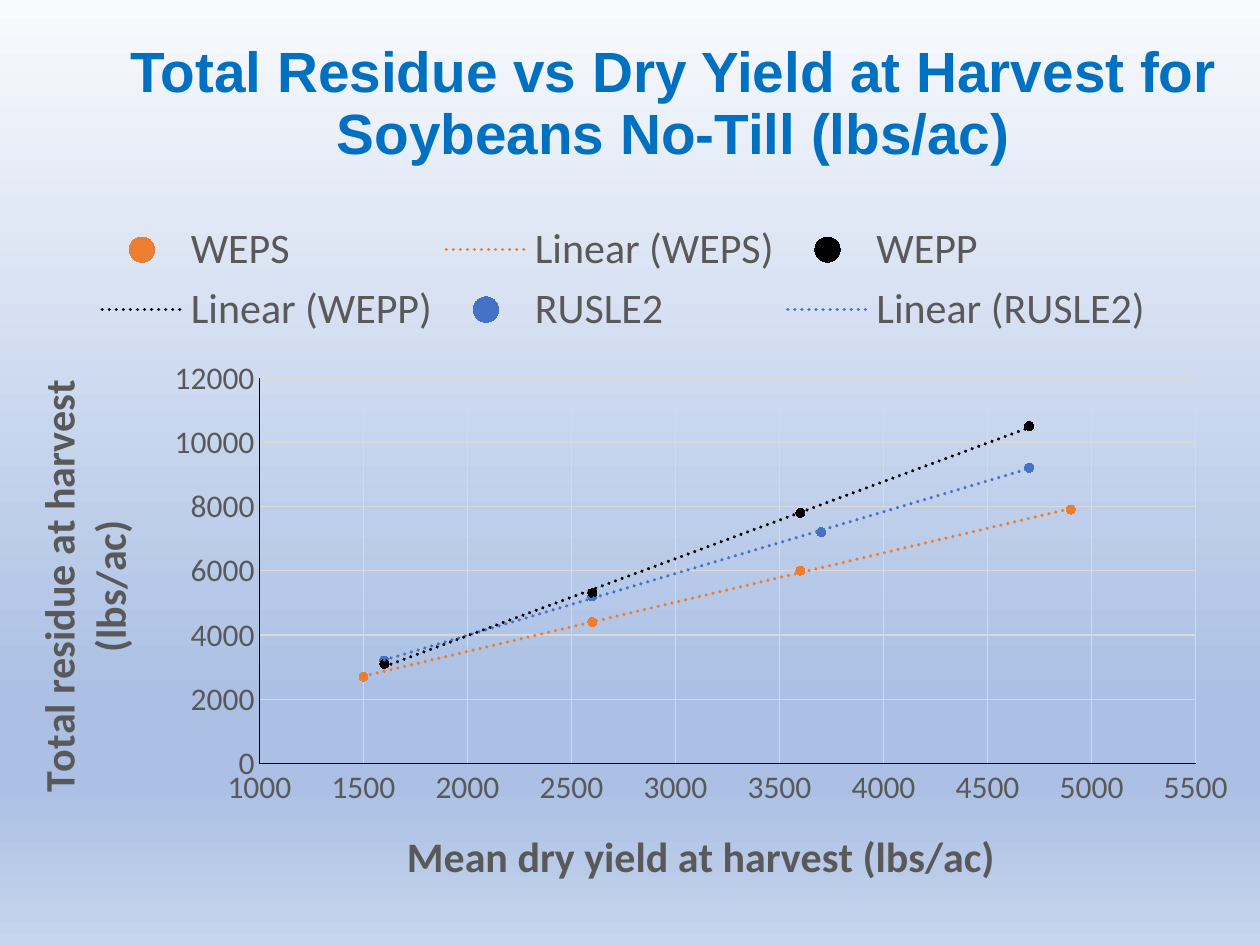
from lxml import etree
from pptx import Presentation
from pptx.chart.data import XyChartData
from pptx.dml.color import RGBColor
from pptx.enum.chart import (XL_CHART_TYPE, XL_LEGEND_POSITION, XL_MARKER_STYLE,
                             XL_TICK_MARK)
from pptx.enum.text import MSO_ANCHOR, PP_ALIGN
from pptx.oxml import parse_xml
from pptx.oxml.ns import nsdecls, qn
from pptx.util import Inches, Pt

SCATTER = XL_CHART_TYPE.XY_SCATTER
TOP = XL_LEGEND_POSITION.TOP
CIRCLE = XL_MARKER_STYLE.CIRCLE
NO_TICK = XL_TICK_MARK.NONE
MIDDLE = MSO_ANCHOR.MIDDLE
CENTER = PP_ALIGN.CENTER

TITLE = "Total Residue vs Dry Yield at Harvest for Soybeans No-Till (lbs/ac)"
GRAY, GRID, BLACK = "595959", "D9D9D9", "000000"
CHART_WIDTH, CHART_HEIGHT = 9.94, 5.64
BACKGROUND_STOPS = [(0, "F8FAFD"), (74, "ABC0E4"), (83, "ABC0E4"), (100, "C7D5ED")]
MODELS = [
    ("WEPS", "ED7D31", [(1500, 2700), (2600, 4400), (3600, 6000), (4900, 7900)]),
    ("WEPP", BLACK, [(1600, 3100), (2600, 5300), (3600, 7800), (4700, 10500)]),
    ("RUSLE2", "4472C4", [(1600, 3200), (2600, 5200), (3700, 7200), (4700, 9200)]),
]


def rgb(color):
    return RGBColor.from_string(color)


def set_attributes(target, values):
    for name, value in values.items():
        setattr(target, name, value)


def format_font(font, size, color, name="Calibri", bold=False):
    set_attributes(font, {"size": Pt(size), "name": name, "bold": bold})
    font.color.rgb = rgb(color)


def format_line(line, color, width=0.75):
    line.color.rgb = rgb(color)
    line.width = Pt(width)


def set_background(slide):
    fill = slide.background.fill
    fill.gradient()
    fill.gradient_angle = 270
    stops = slide._element.find(".//" + qn("a:gsLst"))
    for stop in list(stops):
        stops.remove(stop)
    for position, color in BACKGROUND_STOPS:
        stop = etree.SubElement(stops, qn("a:gs"), pos=str(position * 1000))
        etree.SubElement(stop, qn("a:srgbClr"), val=color)


def add_title(slide):
    box = slide.shapes.add_textbox(Inches(0.69), Inches(0.74), Inches(9.31), Inches(0.74))
    frame = box.text_frame
    set_attributes(frame, {"word_wrap": True, "vertical_anchor": MIDDLE,
                           "margin_bottom": Inches(0.6)})
    paragraph = frame.paragraphs[0]
    set_attributes(paragraph, {"alignment": CENTER, "line_spacing": 0.9})
    run = paragraph.add_run()
    run.text = TITLE
    format_font(run.font, 32.4, "0070C0", "Arial", True)


def set_layout(element, **inches):
    """Place a chart part by inches from the chart's top left corner."""
    for layout in element.findall(qn("c:layout")):
        element.remove(layout)
    inner = '<c:layoutTarget val="inner"/>' if element.tag == qn("c:plotArea") else ""
    modes = '<c:xMode val="edge"/><c:yMode val="edge"/>'
    sizes = "".join(
        f'<c:{key} val="{value / (CHART_WIDTH if key in "xw" else CHART_HEIGHT):.4f}"/>'
        for key, value in inches.items())
    layout = parse_xml(f'<c:layout {nsdecls("c")}><c:manualLayout>{inner}{modes}{sizes}'
                       "</c:manualLayout></c:layout>")
    overlay = element.find(qn("c:overlay"))
    if overlay is None:
        element.insert(0, layout)
    else:
        overlay.addprevious(layout)


def format_axis(axis, title, x, y, scale):
    set_attributes(axis, {"has_major_gridlines": True, "major_tick_mark": NO_TICK,
                          "minor_tick_mark": NO_TICK, **scale})
    format_line(axis.format.line, BLACK)
    format_line(axis.major_gridlines.format.line, GRID)
    format_font(axis.tick_labels.font, 18, GRAY)
    set_attributes(axis.tick_labels, {"number_format": "0", "number_format_is_linked": False})
    run = axis.axis_title.text_frame.paragraphs[0].add_run()
    run.text = title
    format_font(run.font, 24, GRAY, bold=True)
    set_layout(axis.axis_title._element, x=x, y=y)


def format_series(series, color):
    series.format.line.fill.background()
    marker = series.marker
    set_attributes(marker, {"style": CIRCLE, "size": 5})
    marker.format.fill.solid()
    marker.format.fill.fore_color.rgb = rgb(color)
    format_line(marker.format.line, color)
    trend = parse_xml(
        f'<c:trendline {nsdecls("c", "a")}><c:spPr><a:ln w="{Pt(2)}" cap="rnd"><a:solidFill>'
        f'<a:srgbClr val="{color}"/></a:solidFill><a:prstDash val="sysDot"/></a:ln></c:spPr>'
        '<c:trendlineType val="linear"/><c:dispRSqr val="0"/><c:dispEq val="0"/></c:trendline>')
    series._element.find(qn("c:xVal")).addprevious(trend)


def format_legend(chart):
    chart.has_legend = True
    legend = chart.legend
    set_attributes(legend, {"position": TOP, "include_in_layout": False})
    format_font(legend.font, 24, GRAY)
    position = legend._element.find(qn("c:legendPos"))
    for index in (5, 4, 3):
        position.addnext(parse_xml(f'<c:legendEntry {nsdecls("c")}><c:idx val="{index}"/>'
                                   '<c:delete val="1"/></c:legendEntry>'))
    set_layout(legend._element, x=0.7, y=0.06, w=8.5, h=1.02)


def add_residue_chart(slide):
    data = XyChartData()
    for name, _, points in MODELS:
        series = data.add_series(name)
        for yield_value, residue in points:
            series.add_data_point(yield_value, residue)
    chart = slide.shapes.add_chart(SCATTER, Inches(0), Inches(1.65), Inches(CHART_WIDTH),
                                   Inches(CHART_HEIGHT), data).chart
    chart.has_title = False
    format_font(chart.font, 10, BLACK)
    plot = chart.plots[0]
    plot.vary_by_categories = False
    for series, (_, color, _) in zip(plot.series, MODELS):
        format_series(series, color)
    format_axis(chart.category_axis, "Mean dry yield at harvest (lbs/ac)", 3.17, 4.86,
                {"minimum_scale": 1000, "maximum_scale": 5500, "major_unit": 500})
    format_axis(chart.value_axis, "Total residue at harvest (lbs/ac)", 0.18, 0.95,
                {"minimum_scale": 0, "maximum_scale": 12000, "major_unit": 2000})
    format_legend(chart)
    set_layout(plot._element.getparent(), x=2.06, y=1.35, w=7.43, h=3.06)


def main():
    presentation = Presentation()
    set_attributes(presentation, {"slide_width": Inches(10), "slide_height": Inches(7.5)})
    slide = presentation.slides.add_slide(presentation.slide_layouts[6])
    set_background(slide)
    add_title(slide)
    add_residue_chart(slide)
    presentation.save("out.pptx")


if __name__ == "__main__":
    main()
